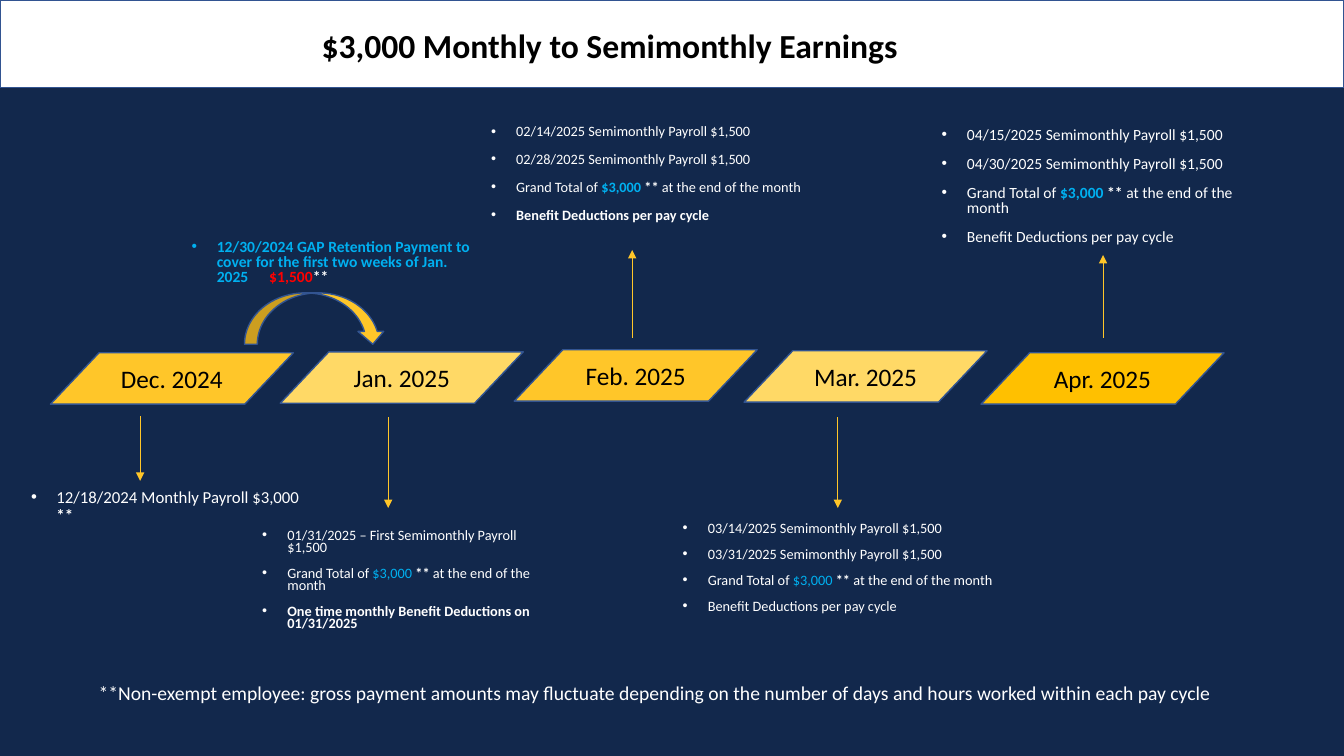
from lxml import etree
from pptx import Presentation
from pptx.dml.color import RGBColor
from pptx.enum.shapes import MSO_CONNECTOR, MSO_SHAPE
from pptx.enum.text import MSO_ANCHOR, PP_ALIGN
from pptx.oxml.ns import qn
from pptx.util import Inches, Pt

RECTANGLE = MSO_SHAPE.RECTANGLE
PARALLELOGRAM = MSO_SHAPE.FLOWCHART_DATA
CURVED_ARROW = MSO_SHAPE.CURVED_LEFT_ARROW
STRAIGHT = MSO_CONNECTOR.STRAIGHT
TOP, MIDDLE = MSO_ANCHOR.TOP, MSO_ANCHOR.MIDDLE
LEFT, CENTER = PP_ALIGN.LEFT, PP_ALIGN.CENTER

COLUMNS, ROWS = 13.33, 7.5
NAVY, WHITE, BLACK, OUTLINE = "12284C", "FFFFFF", "000000", "325491"
GOLD, PALE_GOLD, AMBER = "FFC629", "FFD966", "FFC000"
SKY, RED = "00B0F0", "FF0000"


def color(hex_code):
    return RGBColor.from_string(hex_code)


class TimelineSlide:
    """Holds the style and the current slide; lengths are columns and rows."""

    font = "Calibri"
    indent = Inches(0.25)

    def __init__(self, deck):
        self.slide = deck.slides.add_slide(deck.slide_layouts[5])
        self.column = deck.slide_width / COLUMNS
        self.row = deck.slide_height / ROWS
        background = self.slide.background.fill
        background.solid()
        background.fore_color.rgb = color(NAVY)

    def place(self, left, top, width, height):
        return (round(left * self.column), round(top * self.row),
                round(width * self.column), round(height * self.row))

    def runs(self, paragraph, runs, size):
        for text, hex_code, bold in runs:
            run = paragraph.add_run()
            run.text = text
            run.font.name, run.font.size, run.font.bold = self.font, Pt(size), bold
            run.font.color.rgb = color(hex_code)

    def title(self, text, box, size):
        title = self.slide.shapes.title
        title.left, title.top, title.width, title.height = self.place(*box)
        title.text_frame.vertical_anchor = TOP
        paragraph = title.text_frame.paragraphs[0]
        paragraph.alignment = LEFT
        self.runs(paragraph, [(text, BLACK, True)], size)
        return title

    def shape(self, kind, box, fill, label=None, size=18):
        shape = self.slide.shapes.add_shape(kind, *self.place(*box))
        shape.shadow.inherit = False
        shape.fill.solid()
        shape.fill.fore_color.rgb = color(fill)
        shape.line.color.rgb = color(OUTLINE)
        shape.line.width = Pt(1)
        if label:
            shape.text_frame.vertical_anchor = MIDDLE
            paragraph = shape.text_frame.paragraphs[0]
            paragraph.alignment = CENTER
            self.runs(paragraph, [(label, BLACK, False)], size)
        return shape

    def text(self, box, runs, size):
        frame = self.slide.shapes.add_textbox(*self.place(*box)).text_frame
        frame.word_wrap = True
        self.runs(frame.paragraphs[0], runs, size)

    def bullets(self, box, items, size, spacing, tab=None):
        frame = self.slide.shapes.add_textbox(*self.place(*box)).text_frame
        frame.word_wrap = True
        frame.margin_left = frame.margin_right = 0
        frame.margin_top = frame.margin_bottom = 0
        for index, item in enumerate(items):
            paragraph = frame.add_paragraph() if index else frame.paragraphs[0]
            properties = paragraph._p.get_or_add_pPr()
            properties.set("marL", str(self.indent))
            properties.set("indent", str(-self.indent))
            etree.SubElement(properties, qn("a:buFont"), typeface="Arial")
            etree.SubElement(properties, qn("a:buChar"), char="•")
            if tab:
                tabs = etree.SubElement(properties, qn("a:tabLst"))
                etree.SubElement(tabs, qn("a:tab"),
                                 pos=str(round(tab * self.column)), algn="l")
            paragraph.line_spacing = spacing
            paragraph.space_before = Pt(10 if index else 0)
            self.runs(paragraph, item, size)

    def arrow(self, x, start, end):
        begin_x, begin_y, _, end_y = self.place(x, start, 0, end)
        line = self.slide.shapes.add_connector(STRAIGHT, begin_x, begin_y, begin_x, end_y)
        line.line.color.rgb = color(GOLD)
        line.line.width = Pt(0.5)
        etree.SubElement(line.line._get_or_add_ln(), qn("a:tailEnd"), type="triangle")
        etree.SubElement(line._element.spPr, qn("a:effectLst"))


def plain(text, bold=False):
    return [(text, WHITE, bold)]


def payroll(date):
    return plain(f"{date} Semimonthly Payroll $1,500")


def grand_total(bold):
    return [("Grand Total of ", WHITE, False), ("$3,000", SKY, bold),
            (" ** ", WHITE, True), ("at the end of the month", WHITE, False)]


DEDUCTIONS = "Benefit Deductions per pay cycle"

# Month, fill, left, top, arrow (x, start, end), notes box, size, spacing, notes
MONTHS = [
    ("Dec. 2024", GOLD, 0.5, 3.5, (1.39, 4.13, 4.77),
     (0.31, 4.85, 2.78, 0.45), 12, 0.9,
     [plain("12/18/2024 Monthly Payroll $3,000") + plain(" **", True)]),
    ("Jan. 2025", PALE_GOLD, 2.78, 3.49, (3.85, 4.14, 5.04),
     (2.6, 5.27, 2.78, 1.04), 10.2, 0.7,
     [plain("01/31/2025 – First Semimonthly Payroll $1,500"),
      grand_total(False),
      plain("One time monthly Benefit Deductions on 01/31/2025", True)]),
    ("Feb. 2025", GOLD, 5.1, 3.47, (6.27, 3.35, 2.48),
     (4.87, 1.25, 3.19, 1.06), 10.2, 0.8,
     [payroll("02/14/2025"), payroll("02/28/2025"),
      grand_total(True), plain(DEDUCTIONS, True)]),
    ("Mar. 2025", PALE_GOLD, 7.38, 3.48, (8.31, 4.14, 5.04),
     (6.77, 5.2, 3.19, 0.94), 10.2, 0.7,
     [payroll("03/14/2025"), payroll("03/31/2025"),
      grand_total(False), plain(DEDUCTIONS)]),
    ("Apr. 2025", AMBER, 9.73, 3.5, (10.94, 3.35, 2.53),
     (9.34, 1.28, 3.19, 1.2), 11.1, 0.8,
     [payroll("04/15/2025"), payroll("04/30/2025"),
      grand_total(True), plain(DEDUCTIONS)]),
]


def main():
    deck = Presentation()
    deck.slide_width, deck.slide_height = Inches(COLUMNS), Inches(ROWS)
    timeline = TimelineSlide(deck)

    # Header band, placed behind the title
    heading = timeline.title("$3,000 Monthly to Semimonthly Earnings",
                             (3.09, 0.2, 6.67, 0.5), 24)
    band = timeline.shape(RECTANGLE, (0, 0, COLUMNS, 0.87), WHITE)
    heading._element.addprevious(band._element)

    # Months with their arrows and notes
    for month, fill, left, top, arrow, box, size, spacing, notes in MONTHS:
        timeline.shape(PARALLELOGRAM, (left, top, 2.41, 0.51), fill, month)
        timeline.bullets(box, notes, size, spacing)
        timeline.arrow(*arrow)

    # Retention payment bridging December and January
    retention = [("12/30/2024 GAP Retention Payment to cover for the first "
                  "two weeks of Jan. 2025\t", SKY, True),
                 ("$1,500", RED, True), ("**", WHITE, True)]
    timeline.bullets((1.9, 2.39, 2.78, 0.45), [retention], 11.1, 0.8, tab=0.77)
    bridge = timeline.shape(CURVED_ARROW, (2.87, 2.46, 0.51, 1.4), GOLD)
    bridge.rotation = 270

    # Footnote
    timeline.text((0.88, 6.71, 11.96, 0.64), plain(
        "**Non-exempt employee: gross payment amounts may fluctuate depending on "
        "the number of days and hours worked within each pay cycle"), 14)

    deck.save("out.pptx")


if __name__ == "__main__":
    main()
